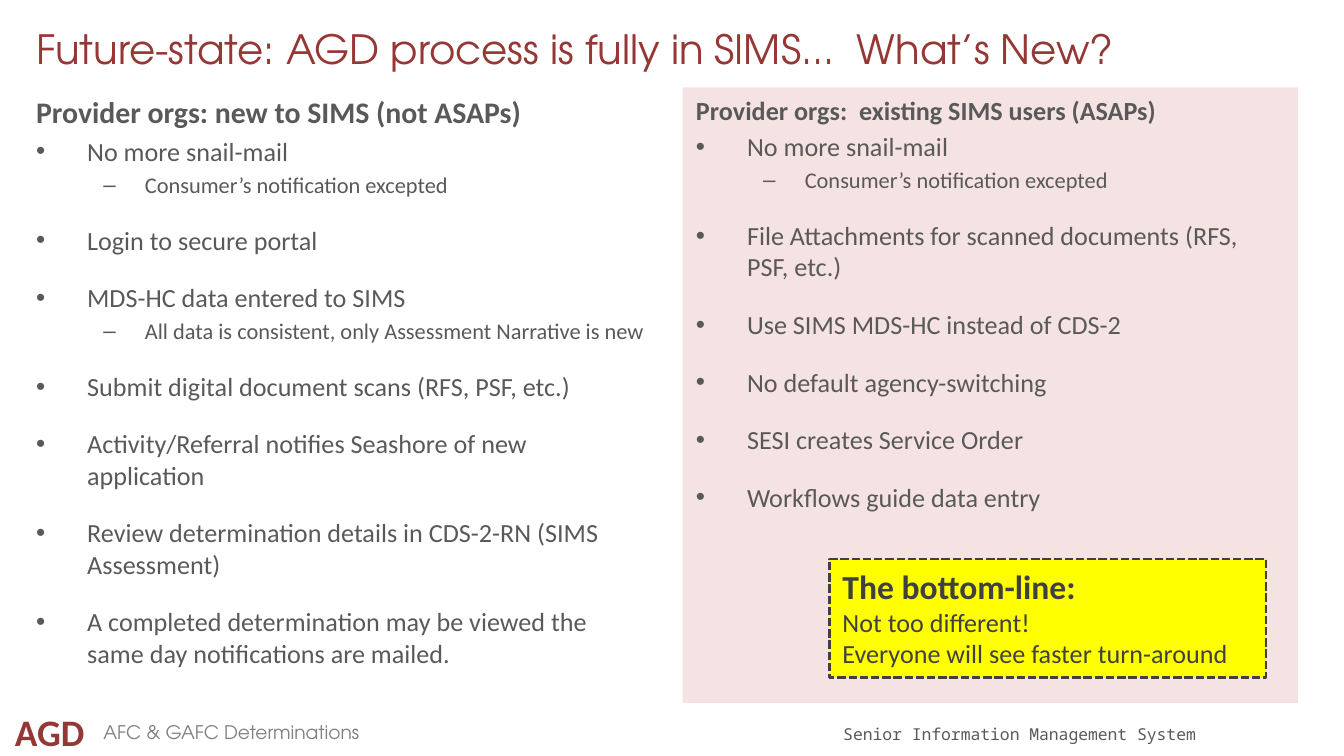
from lxml import etree
from pptx import Presentation
from pptx.dml.color import RGBColor
from pptx.enum.dml import MSO_LINE
from pptx.enum.shapes import MSO_SHAPE
from pptx.enum.text import MSO_ANCHOR as Anchor, MSO_AUTO_SIZE as AutoSize, PP_ALIGN as Align
from pptx.oxml.ns import qn
from pptx.util import Inches, Pt

COLORS = {"maroon": "953735", "body": "595959", "footer": "808080", "dark": "404040",
          "white": "FFFFFF", "pink": "F2DCDB", "yellow": "FFFF00"}
BODY_FONT, DISPLAY_FONT, MONO_FONT = "Calibri", "TeX Gyre Adventor", "Noto Sans Mono"
BULLET_FONT = "Arial"
TOPIC_GAP = 14
NEW_USERS = [
    ("No more snail-mail", ["Consumer’s notification excepted"]),
    ("Login to secure portal", []),
    ("MDS-HC data entered to SIMS",
     ["All data is consistent, only Assessment Narrative is new"]),
    ("Submit digital document scans (RFS, PSF, etc.)", []),
    ("Activity/Referral notifies Seashore of new application", []),
    ("Review determination details in CDS-2-RN (SIMS Assessment)", []),
    ("A completed determination may be viewed the same day notifications are mailed.", []),
]
EXISTING_USERS = [
    ("No more snail-mail", ["Consumer’s notification excepted"]),
    ("File Attachments for scanned documents (RFS, PSF, etc.)", []),
    ("Use SIMS MDS-HC instead of CDS-2", []),
    ("No default agency-switching", []),
    ("SESI creates Service Order", []),
    ("Workflows guide data entry", []),
]


def rgb(name):
    """Return the palette colour with this name."""
    return RGBColor.from_string(COLORS[name])


def write(frame, text, size=14, font=BODY_FONT, color="body", bold=False, align=Align.LEFT,
          before=0, line_spacing=None, bullet=None, level=0, indent=(0, 0)):
    """Add one formatted paragraph to a text frame."""
    first = frame.paragraphs[0]
    paragraph = frame.add_paragraph() if first.runs else first
    if bullet:
        props = paragraph._p.get_or_add_pPr()
        props.set("marL", str(Inches(indent[0])))
        props.set("indent", str(Inches(indent[1])))
        etree.SubElement(props, qn("a:buFont")).set("typeface", BULLET_FONT)
        etree.SubElement(props, qn("a:buChar")).set("char", bullet)
    paragraph.level = level
    paragraph.alignment = align
    paragraph.space_before = Pt(before)
    if line_spacing:
        paragraph.line_spacing = line_spacing
    run = paragraph.add_run()
    run.text = text
    run.font.size, run.font.name, run.font.bold = Pt(size), font, bold
    run.font.color.rgb = rgb(color)


def add_label(slide, text, left, top, width, height, wrap=True, **style):
    """Add a one-line text box centred vertically."""
    frame = slide.shapes.add_textbox(
        Inches(left), Inches(top), Inches(width), Inches(height)).text_frame
    frame.word_wrap = wrap
    frame.vertical_anchor = Anchor.MIDDLE
    write(frame, text, **style)


def add_panel(slide, left, top, width, height, fill, opacity=None):
    """Add a filled rectangle for text and return it."""
    panel = slide.shapes.add_shape(
        MSO_SHAPE.RECTANGLE, Inches(left), Inches(top), Inches(width), Inches(height))
    panel.shadow.inherit = False
    panel.fill.solid()
    panel.fill.fore_color.rgb = rgb(fill)
    if opacity:
        tint = panel._element.spPr.find(qn("a:solidFill")).find(qn("a:srgbClr"))
        etree.SubElement(tint, qn("a:alpha")).set("val", str(opacity * 1000))
    panel.line.fill.background()
    panel.text_frame.word_wrap = True
    panel.text_frame.vertical_anchor = Anchor.TOP
    return panel


def add_column(slide, heading, topics, left, width, fill, heading_size):
    """Add a panel with a heading and two levels of bullets."""
    frame = add_panel(slide, left, 0.65, width, 4.58, fill, opacity=80).text_frame
    write(frame, heading, size=heading_size, bold=True)
    for index, (topic, details) in enumerate(topics):
        write(frame, topic, before=TOPIC_GAP if index else 2.8,
              bullet="•", indent=(0.38, -0.38))
        for detail in details:
            write(frame, detail, size=12, before=2.4, bullet="–", level=1,
                  indent=(0.81, -0.31))


def add_title(slide, text):
    """Place and fill the title placeholder."""
    title = slide.shapes.title
    title.left, title.top = Inches(0.17), Inches(0.15)
    title.width, title.height = Inches(9.64), Inches(0.42)
    title.text_frame.auto_size = AutoSize.NONE
    title.text_frame.vertical_anchor = Anchor.MIDDLE
    write(title.text_frame, text, size=21.6, font=DISPLAY_FONT, color="maroon")


def add_bottom_line(slide):
    """Add the dashed callout with the conclusion."""
    callout = add_panel(slide, 6.17, 4.16, 3.25, 0.88, "yellow")
    callout.line.color.rgb = rgb("dark")
    callout.line.width = Pt(1.5)
    callout.line.dash_style = MSO_LINE.SQUARE_DOT
    write(callout.text_frame, "The bottom-line:", size=18, color="dark", bold=True)
    for conclusion in ("Not too different!", "Everyone will see faster turn-around"):
        write(callout.text_frame, conclusion, color="dark")


def add_footer(slide):
    """Add the footer labels."""
    add_label(slide, "Senior Information Management System", 6.08, 5.36, 2.92, 0.23,
              size=8.8, font=MONO_FONT, align=Align.RIGHT, line_spacing=0.8)
    add_label(slide, "AFC & GAFC Determinations", 0.67, 5.33, 2.92, 0.23,
              size=10, font=DISPLAY_FONT, color="footer")
    add_label(slide, "AGD", 0.01, 5.22, 0.72, 0.44, wrap=False,
              size=20, color="maroon", bold=True, align=Align.CENTER)


def main():
    """Build and save the slide."""
    deck = Presentation()
    deck.slide_width, deck.slide_height = Inches(10), Inches(5.625)
    slide = deck.slides.add_slide(deck.slide_layouts[5])
    add_footer(slide)
    add_title(slide, "Future-state: AGD process is fully in SIMS...  What’s New?")
    add_column(slide, "Provider orgs: new to SIMS (not ASAPs)", NEW_USERS,
               0.17, 4.75, "white", 16)
    add_column(slide, "Provider orgs:  existing SIMS users (ASAPs)", EXISTING_USERS,
               5.08, 4.58, "pink", 14)
    add_bottom_line(slide)
    deck.save("out.pptx")


if __name__ == "__main__":
    main()
